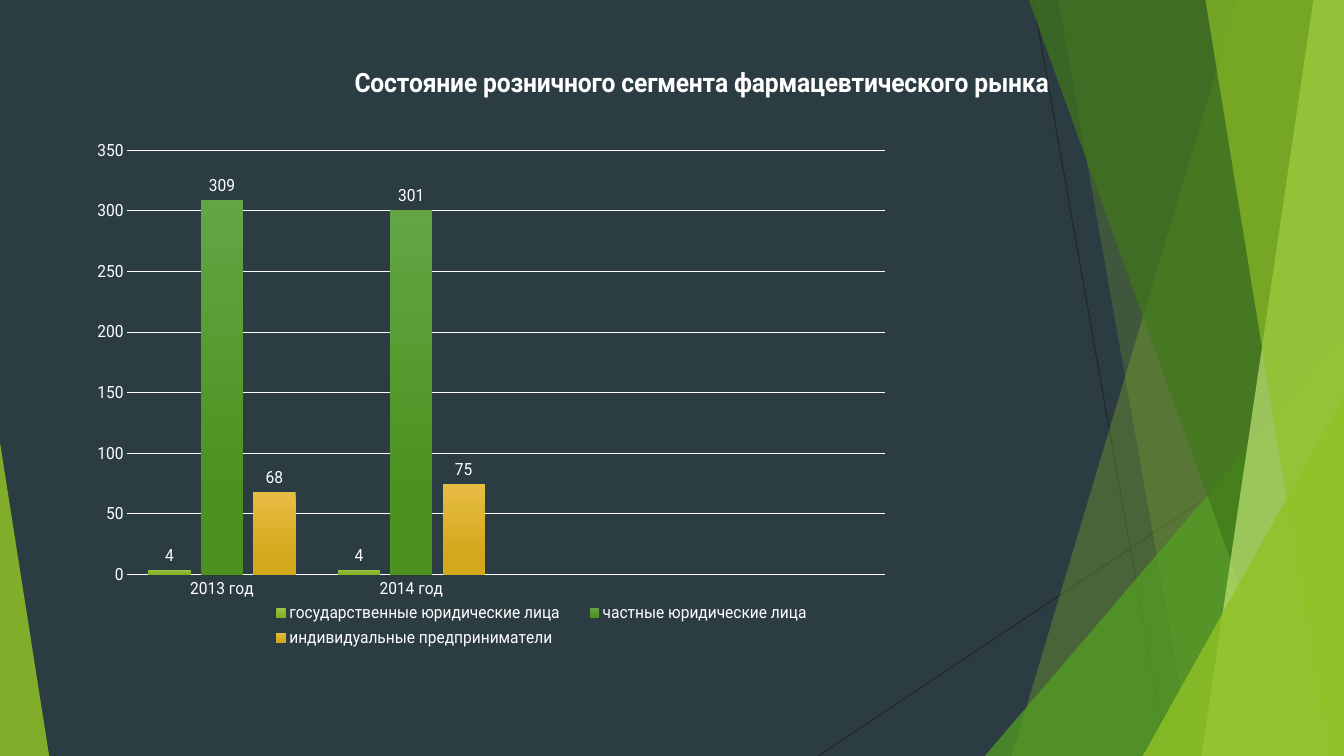
from dataclasses import dataclass

from lxml import etree
from pptx import Presentation
from pptx import util as u
from pptx.chart.data import CategoryChartData
from pptx.dml.color import RGBColor
from pptx.enum import chart as kinds, shapes
from pptx.oxml.ns import qn


@dataclass(frozen=True)
class Theme:
    font: str = "Roboto"
    background: str = "2C3C43"
    text: str = "FFFFFF"
    thread: str = "262626"
    lime: str = "90C226"
    green: str = "54A021"
    forest: str = "3F7819"
    pale: str = "C0E474"
    bars: tuple = (("97C547", "84B223"), ("63A545", "4D921E"), ("E7BC43", "D2A91B"))
    title_size: float = 19
    label_size: float = 12
    base_size: float = 10


WIDTH, HEIGHT = 33.87, 19.05


class SlideBuilder:
    def __init__(self, slide, theme):
        self.slide = slide
        self.theme = theme
        fill = slide.background.fill
        fill.solid()
        fill.fore_color.rgb = RGBColor.from_string(theme.background)

    def paint(self, shape, color, opacity):
        shape.shadow.inherit = False
        shape.line.fill.background()
        shape.fill.solid()
        shape.fill.fore_color.rgb = RGBColor.from_string(color)
        tone = next(shape.element.spPr.iter(qn("a:srgbClr")))
        etree.SubElement(tone, qn("a:alpha")).set("val", str(opacity * 1000))

    def thread(self, start, end):
        points = [u.Cm(value) for value in (*start, *end)]
        line = self.slide.shapes.add_connector(shapes.MSO_CONNECTOR.STRAIGHT, *points)
        self.stroke(line.line, self.theme.thread, 0.75)
        etree.SubElement(line.element.spPr, qn("a:effectLst"))

    def band(self, top_x, bottom_x, color, opacity):
        corners = [(top_x, 0), (WIDTH, 0), (WIDTH, HEIGHT), (bottom_x, HEIGHT)]
        points = [(u.Cm(x), u.Cm(y)) for x, y in corners]
        outline = self.slide.shapes.build_freeform(*points[0])
        outline.add_line_segments(points[1:], close=True)
        self.paint(outline.convert_to_shape(), color, opacity)

    def corner(self, left, top, right, apex, color, opacity):
        box = [u.Cm(value) for value in (left, top, right - left, HEIGHT - top)]
        triangle = self.slide.shapes.add_shape(shapes.MSO_SHAPE.ISOSCELES_TRIANGLE, *box)
        triangle.adjustments[0] = apex
        self.paint(triangle, color, opacity)

    def stroke(self, line, color, width):
        line.fill.solid()
        line.fill.fore_color.rgb = RGBColor.from_string(color)
        line.width = u.Pt(width)

    def type(self, font, size, bold=False):
        font.name = self.theme.font
        font.size = u.Pt(size)
        font.bold = bold
        font.color.rgb = RGBColor.from_string(self.theme.text)

    def place(self, part, inner=False, **fractions):
        for layout in part.findall(qn("c:layout")):
            part.remove(layout)
        overlay = part.find(qn("c:overlay"))
        layout = etree.Element(qn("c:layout"))
        part.insert(0 if overlay is None else part.index(overlay), layout)
        manual = etree.SubElement(layout, qn("c:manualLayout"))
        settings = [("layoutTarget", "inner")] if inner else []
        settings += [("xMode", "edge"), ("yMode", "edge"), *fractions.items()]
        for name, value in settings:
            etree.SubElement(manual, qn(f"c:{name}")).set("val", str(value))

    def column_chart(self, box, title, categories, series):
        data = CategoryChartData()
        data.categories = categories
        for name, values in series:
            data.add_series(name, values)
        frame = self.slide.shapes.add_chart(
            kinds.XL_CHART_TYPE.COLUMN_CLUSTERED, *(u.Cm(value) for value in box), data)
        chart = frame.chart
        self.type(chart.font, self.theme.base_size)
        self.chart_title(chart, title)
        self.chart_axes(chart)
        self.chart_columns(chart.plots[0])
        chart.has_legend = True
        chart.legend.position = kinds.XL_LEGEND_POSITION.BOTTOM
        chart.legend.include_in_layout = False
        self.type(chart.legend.font, self.theme.label_size)
        return chart

    def chart_title(self, chart, title):
        chart.has_title = True
        para = chart.chart_title.text_frame.paragraphs[0]
        span = para.add_run()
        span.text = title
        self.type(span.font, self.theme.title_size, bold=True)

    def chart_axes(self, chart):
        for axis in (chart.category_axis, chart.value_axis):
            axis.major_tick_mark = axis.minor_tick_mark = kinds.XL_TICK_MARK.NONE
            self.type(axis.tick_labels.font, self.theme.label_size)
        self.stroke(chart.category_axis.format.line, self.theme.text, 1)
        scale = chart.value_axis
        scale.minimum_scale, scale.maximum_scale, scale.major_unit = 0, 350, 50
        scale.format.line.fill.background()
        scale.has_major_gridlines = True
        self.stroke(scale.major_gridlines.format.line, self.theme.text, 0.75)

    def chart_columns(self, plot):
        plot.gap_width, plot.overlap = 100, -24
        plot.vary_by_categories = False
        for series, colors in zip(plot.series, self.theme.bars):
            fill = series.format.fill
            fill.gradient()
            fill.gradient_angle = 270
            for stop, color, position in zip(fill.gradient_stops, colors, (0, 0.78)):
                stop.color.rgb = RGBColor.from_string(color)
                stop.position = position
            labels = series.data_labels
            labels.show_value = True
            labels.position = kinds.XL_LABEL_POSITION.OUTSIDE_END
            self.type(labels.font, self.theme.label_size)


def main():
    deck = Presentation()
    deck.slide_width, deck.slide_height = u.Cm(WIDTH), u.Cm(HEIGHT)
    theme = Theme()
    page = SlideBuilder(deck.slides.add_slide(deck.slide_layouts[6]), theme)

    page.thread((26.04, 0), (29.41, HEIGHT))
    page.thread((WIDTH, 10.24), (20.62, HEIGHT))
    page.band(31.19, 25.5, theme.lime, 30)
    page.band(26.67, 30.05, theme.lime, 20)
    page.corner(24.82, 8.46, WIDTH, 1, theme.green, 72)
    page.band(25.93, 32.79, theme.forest, 70)
    page.band(33.1, 30.28, theme.pale, 70)
    page.band(30.38, 33.48, theme.lime, 65)
    page.corner(28.8, 9.98, WIDTH, 1, theme.lime, 80)
    page.corner(0, 11.15, 1.24, 0, theme.lime, 85)

    chart = page.column_chart(
        (2.31, 1.38, 24.28, 15.06),
        "Состояние розничного сегмента фармацевтического рынка",
        ["2013 год", "2014 год", "", ""],
        [("государственные юридические лица", (4, 4, None, None)),
         ("частные юридические лица", (309, 301, None, None)),
         ("индивидуальные предприниматели", (68, 75, None, None))])
    root = chart.element
    page.place(root.find(".//" + qn("c:title")), x=0.29, y=0.01)
    page.place(root.find(".//" + qn("c:plotArea")), inner=True, x=0.04, y=0.16, w=0.85, h=0.71)
    page.place(root.find(".//" + qn("c:legend")), x=0.18, y=0.91, w=0.65, h=0.09)

    deck.save("out.pptx")


if __name__ == "__main__":
    main()
